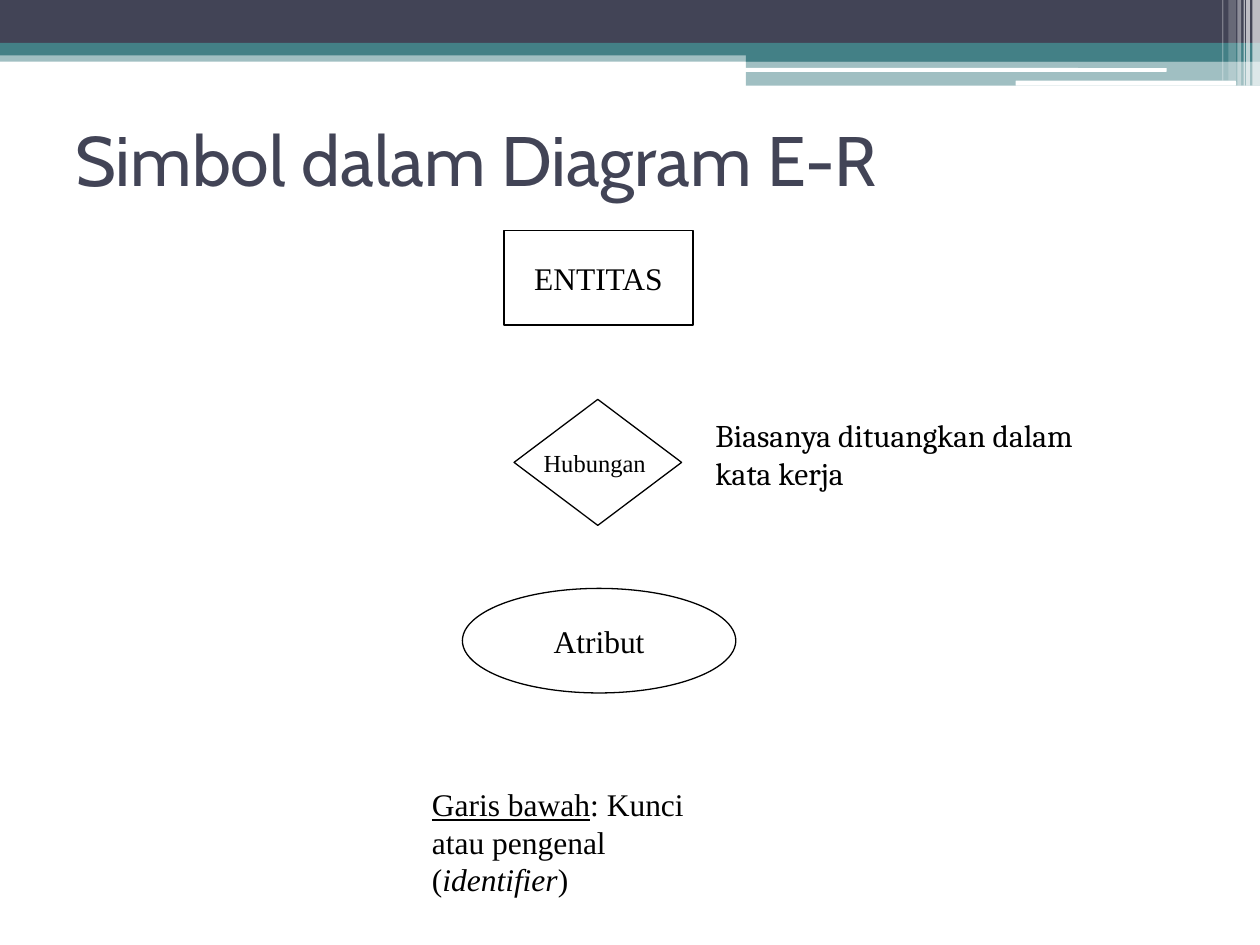
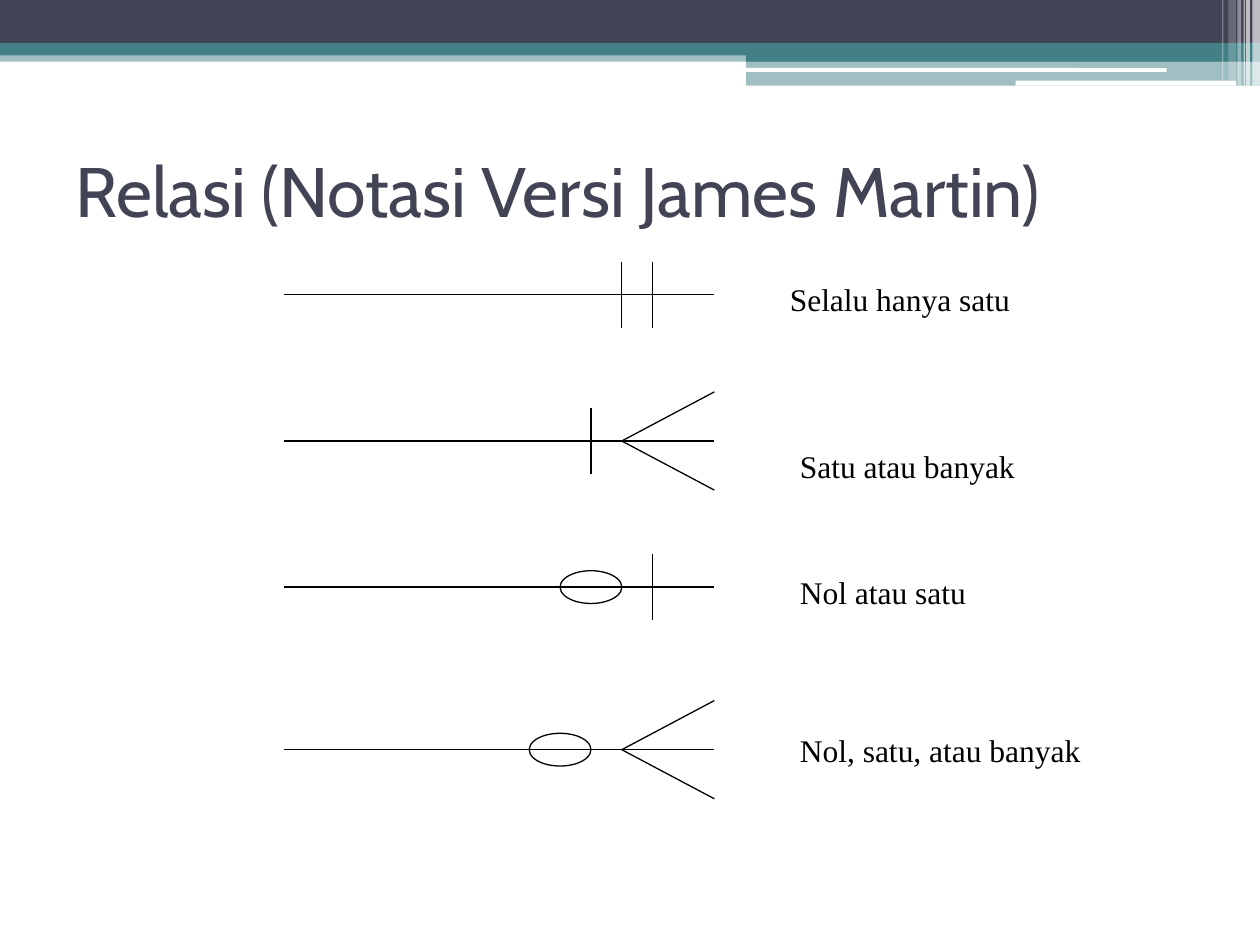
"""Build two slides on E-R diagram symbols and relationship notation."""
from dataclasses import dataclass

from lxml.etree import SubElement
from pptx import Presentation
from pptx.dml.color import RGBColor
from pptx.enum.shapes import MSO_CONNECTOR as Connector, MSO_SHAPE as Shape
from pptx.enum.text import MSO_ANCHOR as Anchor, MSO_AUTO_SIZE as AutoSize, PP_ALIGN as Align
from pptx.oxml.ns import qn
from pptx.util import Inches, Pt

COLORS = {"ink": "424456", "teal": "438086", "white": "FFFFFF", "black": "000000"}
TITLE_FONT, NOTE_FONT, BODY_FONT = "Cabin", "Cambria", "Times New Roman"
LINE_START, LINE_END, MARK_STEP = 2.25, 5.67, 0.245
TICK_RISE, FOOT_RISE, CIRCLE_RISE = 0.26, 0.39, 0.13


@dataclass(frozen=True)
class Band:
    left: float
    top: float
    width: float
    height: float
    color: str
    opacity: int = 100
    kind: Shape = Shape.RECTANGLE


@dataclass(frozen=True)
class Symbol:
    kind: Shape
    left: float
    top: float
    width: float
    height: float
    label: str
    size: int = 18


@dataclass(frozen=True)
class Relation:
    """A line whose marks sit a number of steps back from its right end."""
    y: float
    label: str
    label_left: float
    label_top: float
    ticks: tuple[int, ...] = ()
    circle: int | None = None
    many: bool = False


BANDS = [
    Band(0, 0.4, 10, 0.09, "teal", 50),
    Band(0, 0, 10, 0.34, "ink"),
    Band(0, 0.34, 10, 0.1, "teal"),
    Band(5.92, 0.39, 4.08, 0.1, "teal"),
    Band(5.92, 0.48, 4.08, 0.2, "teal", 50),
    Band(5.91, 0.54, 3.35, 0.03, "white", kind=Shape.ROUNDED_RECTANGLE),
    Band(8.06, 0.64, 1.75, 0.04, "white", kind=Shape.ROUNDED_RECTANGLE),
    Band(9.94, 0, 0.06, 0.68, "white", 65),
    Band(9.89, 0, 0.03, 0.68, "white", 65),
    Band(9.87, 0, 0.01, 0.68, "white", 60),
    Band(9.82, 0, 0.03, 0.68, "white", 40),
    Band(9.75, 0, 0.06, 0.64, "white", 20),
    Band(9.7, 0, 0.01, 0.64, "white", 30),
]
SYMBOLS = [
    Symbol(Shape.RECTANGLE, 4, 1.83, 1.5, 0.75, "ENTITAS"),
    Symbol(Shape.FLOWCHART_DECISION, 4.08, 3.17, 1.33, 1, "Hubungan ", 14),
    Symbol(Shape.OVAL, 3.67, 4.67, 2.17, 0.83, "Atribut"),
]
RELATIONS = [
    Relation(2.34, "Selalu hanya satu", 6.17, 2.17, ticks=(2, 3)),
    Relation(3.5, "Satu atau banyak", 6.25, 3.5, ticks=(4,), many=True),
    Relation(4.66, "Nol atau satu", 6.25, 4.5, ticks=(2,), circle=4),
    Relation(5.95, "Nol, satu, atau banyak", 6.25, 5.75, circle=5, many=True),
]


def rgb(name: str) -> RGBColor:
    return RGBColor.from_string(COLORS[name])


def write(para, text: str, *, font: str = BODY_FONT, size: int = 18, color: str = "black",
          underline: bool = False, italic: bool = False) -> None:
    span = para.add_run()
    span.text = text
    span.font.name, span.font.size = font, Pt(size)
    span.font.color.rgb = rgb(color)
    span.font.underline, span.font.italic = underline, italic


def add_form(shapes, kind: Shape, left: float, top: float, width: float, height: float):
    form = shapes.add_shape(kind, Inches(left), Inches(top), Inches(width), Inches(height))
    form.shadow.inherit = False
    return form


def add_outline(shapes, kind: Shape, left: float, top: float, width: float, height: float):
    form = add_form(shapes, kind, left, top, width, height)
    form.fill.background()
    form.line.color.rgb, form.line.width = rgb("black"), Pt(0.75)
    return form


def add_symbol(page, symbol: Symbol) -> None:
    form = add_outline(page.shapes, symbol.kind, symbol.left, symbol.top,
                       symbol.width, symbol.height)
    frame = form.text_frame
    frame.word_wrap, frame.vertical_anchor = False, Anchor.MIDDLE
    para = frame.paragraphs[0]
    para.alignment = Align.CENTER
    write(para, symbol.label, size=symbol.size)


def add_line(shapes, x1: float, y1: float, x2: float, y2: float) -> None:
    line = shapes.add_connector(Connector.STRAIGHT, Inches(x1), Inches(y1), Inches(x2), Inches(y2))
    line.line.color.rgb, line.line.width = rgb("black"), Pt(0.75)
    SubElement(line.element.spPr, qn("a:effectLst"))


def add_note(page, left: float, top: float, width: float, height: float):
    box = page.shapes.add_textbox(Inches(left), Inches(top), Inches(width), Inches(height))
    box.text_frame.word_wrap = True
    box.text_frame.auto_size = AutoSize.SHAPE_TO_FIT_TEXT
    return box.text_frame.paragraphs[0]


def add_relation(page, shapes, relation: Relation) -> None:
    y = relation.y
    add_line(shapes, LINE_START, y, LINE_END, y)
    for step in relation.ticks:
        x = LINE_END - step * MARK_STEP
        add_line(shapes, x, y - TICK_RISE, x, y + TICK_RISE)
    if relation.many:
        for rise in (-FOOT_RISE, FOOT_RISE):
            add_line(shapes, LINE_END - 3 * MARK_STEP, y, LINE_END, y + rise)
    if relation.circle is not None:
        add_outline(shapes, Shape.OVAL, LINE_END - relation.circle * MARK_STEP - MARK_STEP,
                    y - CIRCLE_RISE, 2 * MARK_STEP, 2 * CIRCLE_RISE)
    write(add_note(page, relation.label_left, relation.label_top, 2.67, 0.4), relation.label)


def add_bands(page) -> None:
    """Draw the header bands and hand them to the layout that the pages share."""
    for index, band in enumerate(BANDS):
        form = add_form(page.shapes, band.kind, band.left, band.top, band.width, band.height)
        form.fill.solid()
        form.fill.fore_color.rgb = rgb(band.color)
        form.line.fill.background()
        if band.opacity < 100:
            color = form.element.spPr.find(qn("a:solidFill"))[0]
            SubElement(color, qn("a:alpha"), val=str(band.opacity * 1000))
        form.element.nvSpPr.cNvPr.id = 100 + index
        page.slide_layout.shapes.element.insert(2 + index, form.element)


def add_page(deck, title: str, top: float):
    page = deck.slides.add_slide(deck.slide_layouts[5])
    box = page.shapes.title
    box.left, box.top, box.width, box.height = Inches(0.5), Inches(top), Inches(9), Inches(1.17)
    frame = box.text_frame
    frame.auto_size, frame.vertical_anchor = AutoSize.NONE, Anchor.MIDDLE
    para = frame.paragraphs[0]
    para.alignment = Align.LEFT
    write(para, title, font=TITLE_FONT, size=40, color="ink")
    return page


def add_symbols_page(deck) -> None:
    page = add_page(deck, "Simbol dalam Diagram E-R", 0.67)
    add_bands(page)
    for symbol in SYMBOLS:
        add_symbol(page, symbol)
    key = add_note(page, 3.33, 6.18, 2.67, 0.7)
    write(key, "Garis bawah", underline=True)
    write(key, ": Kunci atau pengenal (")
    write(key, "identifier", italic=True)
    write(key, ")")
    write(add_note(page, 5.58, 3.25, 3.17, 0.71), "Biasanya dituangkan dalam kata kerja",
          font=NOTE_FONT)


def add_relations_page(deck) -> None:
    page = add_page(deck, "Relasi (Notasi Versi James Martin)", 0.92)
    notation = page.shapes.add_group_shape()
    for relation in RELATIONS:
        add_relation(page, notation.shapes, relation)


def main() -> None:
    deck = Presentation()
    deck.slide_width, deck.slide_height = Inches(10), Inches(7.5)
    add_symbols_page(deck)
    add_relations_page(deck)
    deck.save("out.pptx")


if __name__ == "__main__":
    main()
